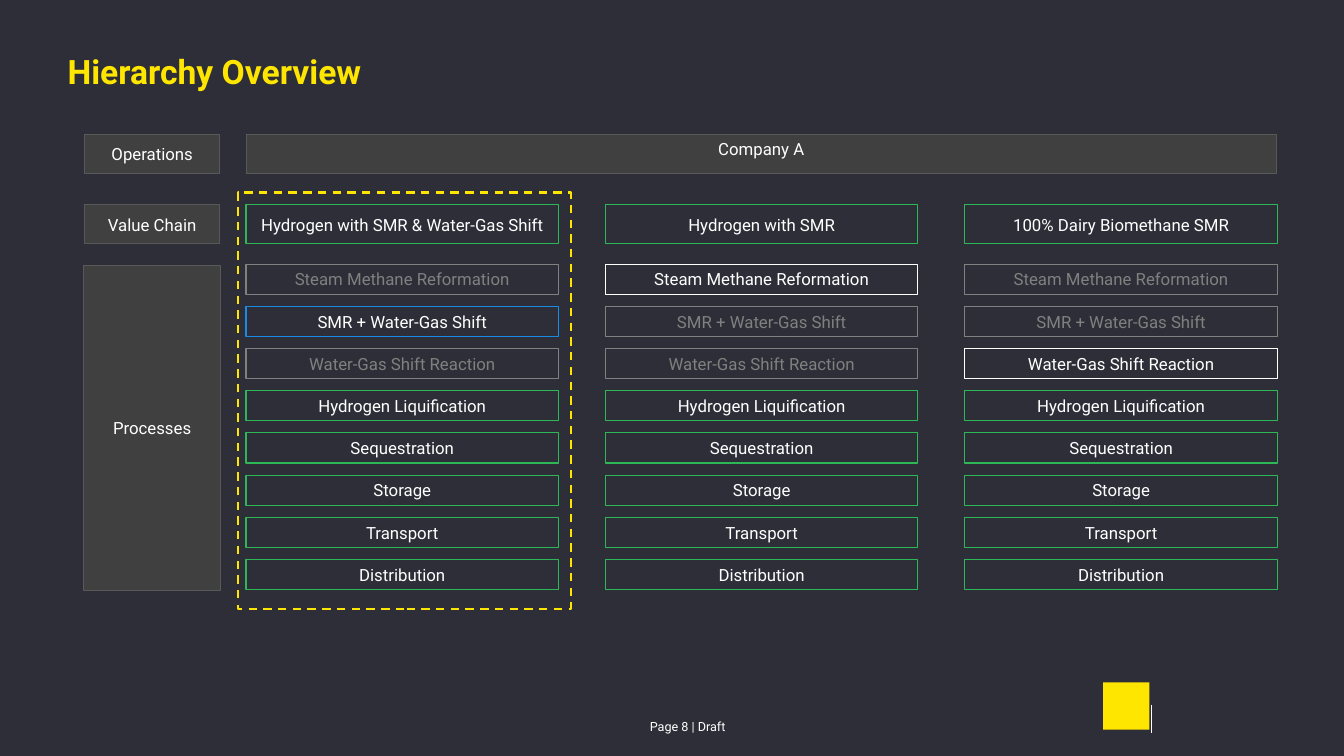
import dataclasses
from typing import Optional

import lxml.etree
import pptx
import pptx.dml.color
import pptx.enum.dml
import pptx.enum.shapes
import pptx.enum.text
import pptx.oxml.ns
import pptx.util

Inches = pptx.util.Inches
Pt = pptx.util.Pt
RGBColor = pptx.dml.color.RGBColor
Align = pptx.enum.text.PP_ALIGN
Anchor = pptx.enum.text.MSO_ANCHOR

BACKGROUND = RGBColor(0x2E, 0x2E, 0x38)
YELLOW = RGBColor(0xFF, 0xE6, 0x00)
WHITE = RGBColor(0xFF, 0xFF, 0xFF)
GREEN = RGBColor(0x2D, 0xB7, 0x57)
BLUE = RGBColor(0x18, 0x8C, 0xE5)
MUTED = RGBColor(0x80, 0x80, 0x80)
PANEL = RGBColor(0x40, 0x40, 0x40)
PANEL_EDGE = RGBColor(0x59, 0x59, 0x59)
FONT = "Roboto"

COLUMN_LEFT, COLUMN_WIDTH, COLUMN_PITCH = 2.44, 3.1, 7.13 / 2
HEADER_HEIGHT = 0.39
OPERATIONS_TOP, CHAIN_TOP = 1.33, 2.03
PROCESS_TOP, PROCESS_HEIGHT, PROCESS_PITCH = 2.62, 0.3, 2.93 / 7

ALTERNATIVES = ("Steam Methane Reformation", "SMR + Water-Gas Shift", "Water-Gas Shift Reaction")
SHARED_STEPS = ("Hydrogen Liquification", "Sequestration", "Storage", "Transport", "Distribution")


@dataclasses.dataclass(frozen=True)
class Area:
    left: float
    top: float
    width: float
    height: float

    def lengths(self) -> tuple:
        return tuple(Inches(value) for value in dataclasses.astuple(self))


@dataclasses.dataclass(frozen=True)
class Panel:
    """A filled grey box with a label."""
    label: str
    area: Area
    anchor: Anchor = Anchor.MIDDLE


@dataclasses.dataclass(frozen=True)
class ValueChain:
    """A column of processes, with the one alternative it uses."""
    name: str
    chosen: str
    chosen_edge: RGBColor


PANELS = (
    Panel("Company A", Area(COLUMN_LEFT, OPERATIONS_TOP, 10.22, HEADER_HEIGHT), Anchor.TOP),
    Panel("Processes", Area(0.83, 2.63, 1.36, 3.23)),
    Panel("Value Chain", Area(0.84, CHAIN_TOP, 1.34, HEADER_HEIGHT)),
    Panel("Operations", Area(0.84, OPERATIONS_TOP, 1.34, HEADER_HEIGHT)),
)
CHAINS = (
    ValueChain("Hydrogen with SMR & Water-Gas Shift", ALTERNATIVES[1], BLUE),
    ValueChain("Hydrogen with SMR", ALTERNATIVES[0], WHITE),
    ValueChain("100% Dairy Biomethane SMR", ALTERNATIVES[2], WHITE),
)


def write(box, text: str, size: float, color: RGBColor, align: Align = Align.CENTER,
          bold: bool = False) -> None:
    """Put one formatted paragraph in a box."""
    frame = box.text_frame
    frame.word_wrap = True
    frame.text = text
    para = frame.paragraphs[0]
    para.alignment = align
    font = para.runs[0].font
    font.name, font.size, font.bold = FONT, Pt(size), bold
    font.color.rgb = color


def add_box(page, area: Area, fill: Optional[RGBColor], edge: Optional[RGBColor]):
    box = page.shapes.add_shape(pptx.enum.shapes.MSO_SHAPE.RECTANGLE, *area.lengths())
    box.shadow.inherit = False
    if fill is None:
        box.fill.background()
    else:
        box.fill.solid()
        box.fill.fore_color.rgb = fill
    if edge is None:
        box.line.fill.background()
    else:
        box.line.color.rgb = edge
        box.line.width = Pt(0.75)
    return box


def add_label(page, text: str, area: Area, edge: RGBColor, color: RGBColor = WHITE,
              fill: Optional[RGBColor] = None, anchor: Anchor = Anchor.MIDDLE) -> None:
    box = add_box(page, area, fill, edge)
    write(box, text, 12, color)
    box.text_frame.vertical_anchor = anchor


def add_chain(page, chain: ValueChain, left: float) -> None:
    add_label(page, chain.name, Area(left, CHAIN_TOP, COLUMN_WIDTH, HEADER_HEIGHT), GREEN)
    for row, step in enumerate(ALTERNATIVES + SHARED_STEPS):
        if step in SHARED_STEPS:
            edge, color = GREEN, WHITE
        elif step == chain.chosen:
            edge, color = chain.chosen_edge, WHITE
        else:
            edge, color = MUTED, MUTED
        top = PROCESS_TOP + row * PROCESS_PITCH
        add_label(page, step, Area(left, top, COLUMN_WIDTH, PROCESS_HEIGHT), edge, color)


def add_title(page, text: str) -> None:
    box = page.shapes.add_textbox(*Area(0.67, 0.57, 12, 0.65).lengths())
    write(box, text, 24, YELLOW, Align.LEFT, bold=True)
    frame = box.text_frame
    frame.margin_left = frame.margin_right = frame.margin_top = frame.margin_bottom = 0
    frame.paragraphs[0].line_spacing = 0.85


def add_brand_mark(page) -> None:
    """Draw a plain block with a thin rule to its right."""
    add_box(page, Area(10.94, 6.77, 0.46, 0.47), YELLOW, None)
    rule = page.shapes.add_connector(
        pptx.enum.shapes.MSO_CONNECTOR.STRAIGHT,
        Inches(11.42), Inches(6.99), Inches(11.42), Inches(7.27))
    rule.line.color.rgb = WHITE
    rule.line.width = Pt(0.75)
    properties = rule.element.find(pptx.oxml.ns.qn("p:spPr"))
    lxml.etree.SubElement(properties, pptx.oxml.ns.qn("a:effectLst"))


def add_highlight(page) -> None:
    frame = add_box(page, Area(2.36, 1.91, 3.3, 4.13), None, YELLOW)
    frame.line.width = Pt(1.5)
    frame.line.dash_style = pptx.enum.dml.MSO_LINE.DASH


def main() -> None:
    deck = pptx.Presentation()
    deck.slide_width, deck.slide_height = Inches(13.33), Inches(7.5)
    page = deck.slides.add_slide(deck.slide_layouts[6])
    page.background.fill.solid()
    page.background.fill.fore_color.rgb = BACKGROUND

    add_brand_mark(page)
    add_title(page, "Hierarchy Overview")
    for panel in PANELS:
        add_label(page, panel.label, panel.area, PANEL_EDGE, fill=PANEL, anchor=panel.anchor)
    for column, chain in enumerate(CHAINS):
        add_chain(page, chain, COLUMN_LEFT + column * COLUMN_PITCH)
    add_highlight(page)
    footer = page.shapes.add_textbox(*Area(4.98, 7.08, 3.68, 0.2).lengths())
    write(footer, "Page 8 | Draft", 9, WHITE)

    deck.save("out.pptx")


if __name__ == "__main__":
    main()
